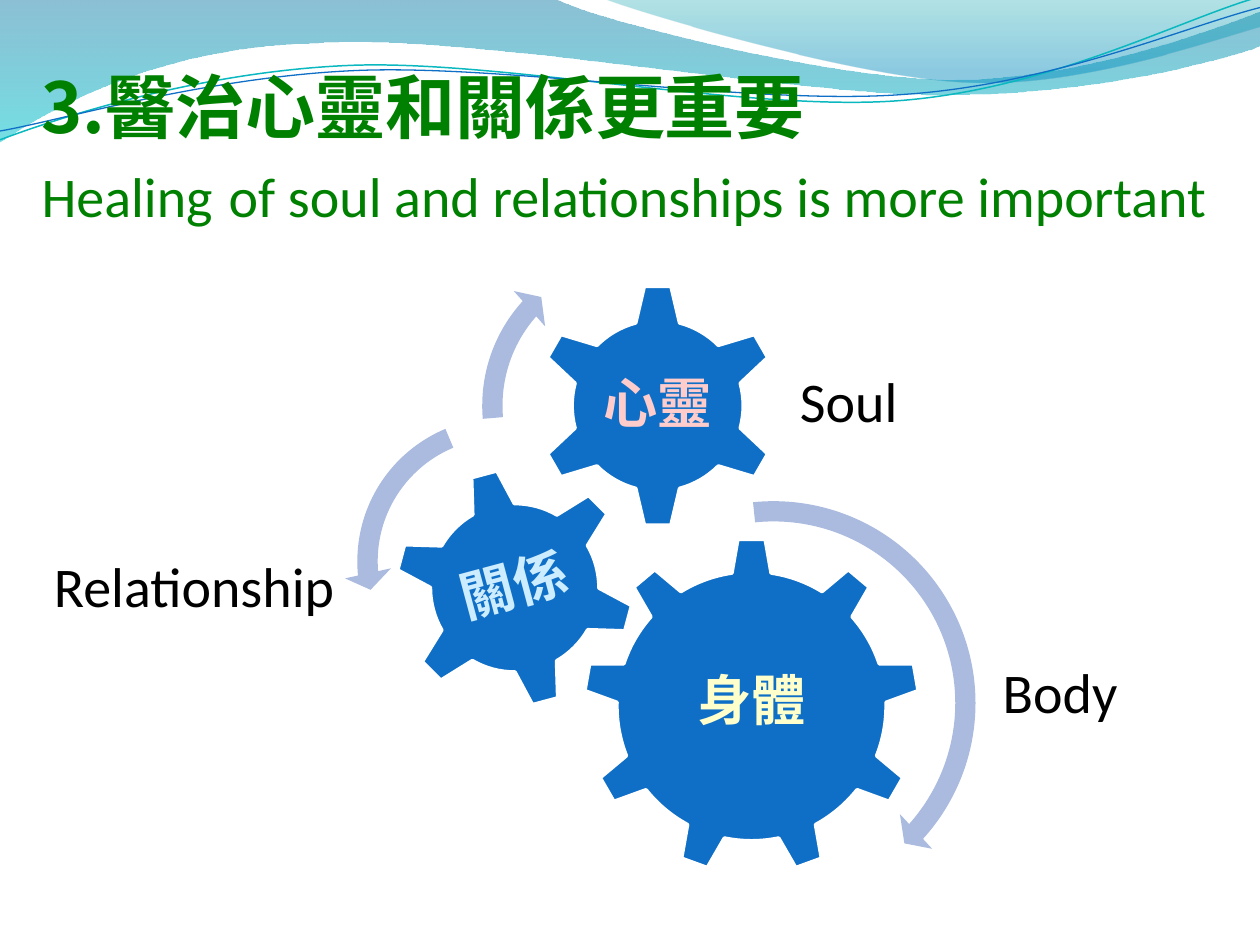
from pptx import Presentation
from pptx.dml.color import RGBColor
from pptx.enum.shapes import MSO_SHAPE
from pptx.enum.text import MSO_ANCHOR, PP_ALIGN
from pptx.oxml.ns import qn
from pptx.util import Inches, Pt
from lxml import etree

GEAR6, GEAR9 = MSO_SHAPE.GEAR_6, MSO_SHAPE.GEAR_9
ARROW, LEFT_ARROW = MSO_SHAPE.CIRCULAR_ARROW, MSO_SHAPE.LEFT_CIRCULAR_ARROW
MIDDLE, BOTTOM = MSO_ANCHOR.MIDDLE, MSO_ANCHOR.BOTTOM
LEFT, CENTER = PP_ALIGN.LEFT, PP_ALIGN.CENTER
CJK, LATIN = "Noto Sans CJK SC", "Calibri"
COLORS = {
    "title": "008000", "gear": "0F6FC6", "outline": "FFFFFF", "arrow": "ABBBDF",
    "body": "FFFFCC", "soul": "FFCCCC", "relationship": "CCECFF", "label": "000000",
    "deep": "0074A1", "cyan": "00C6CF", "teal": "00A1A9", "sky": "008BBF", "aqua": "0AB8BF",
}


def rgb(name):
    return RGBColor.from_string(COLORS[name])


def add_run(p, text, font, size, color, bold=False):
    r = p.add_run()
    r.text = text
    for name, value in {"name": font, "size": Pt(size), "bold": bold}.items():
        setattr(r.font, name, value)
    r.font.color.rgb = rgb(color)
    etree.SubElement(r.font._element, qn("a:ea"), typeface=font)


prs = Presentation()
prs.slide_width, prs.slide_height = Inches(10), Inches(7.5)
s = prs.slides.add_slide(prs.slide_layouts[5])
master_tree = prs.slide_master.shapes._spTree

waves = [
    ([[(0, 0)], [(4.4, -0.01)],
      [(4.76, 0.17), (6.64, 0.63), (7.58, 0.63)], [(8.53, 0.63), (9.58, 0.26), (10, 0.09)],
      [(10.01, 0.36)], [(9.83, 0.44), (8.7, 0.76), (7.46, 0.75)],
      [(6.22, 0.75), (3.82, 0.28), (2.57, 0.34)], [(1.29, 0.36), (0.46, 0.83), (-0.01, 1.13)]],
     [(0, "deep", 45), (1, "cyan", 55)], None),
    ([[(4.79, -0.01)], [(5.09, 0.11), (6.82, 0.62), (7.69, 0.65)],
      [(8.56, 0.69), (9.61, 0.32), (10, 0.21)], [(10, 0)]],
     [(0, "teal", 30), (0.8, "sky", 45)], None),
    ([[(0, 1.11)], [(0.48, 0.93), (1.58, 0.57), (2.77, 0.52)],
      [(3.95, 0.47), (5.93, 0.89), (7.13, 0.8)], [(8.33, 0.71), (9.38, 0.15), (9.98, -0.02)]],
     None, ("aqua", 0.85)),
    ([[(0, 1.04)], [(0.47, 0.96), (1.64, 0.61), (2.83, 0.56)],
      [(4.03, 0.51), (5.97, 0.84), (7.17, 0.75)], [(8.36, 0.67), (9.41, 0.21), (10, 0.06)]],
     None, ("gear", 0.75)),
]
for index, (segments, stops, line) in enumerate(waves):
    points = [(Inches(x), Inches(y)) for seg in segments for x, y in seg]
    fb = s.shapes.build_freeform(*points[0])
    fb.add_line_segments(points[1:], close=line is None)
    sp = fb.convert_to_shape()
    lines = iter(list(sp._element.iter(qn("a:lnTo"))))
    for seg in segments[1:]:
        parts = [next(lines) for _ in seg]
        if len(parts) == 3:
            curve = etree.Element(qn("a:cubicBezTo"))
            parts[0].addprevious(curve)
            for part in parts:
                curve.append(part[0])
                part.getparent().remove(part)
    sp.shadow.inherit = False
    if stops:
        sp.line.fill.background()
        sp.fill.gradient()
        sp.fill.gradient_angle = 270
        for stop, (pos, color, alpha) in zip(sp.fill.gradient_stops, stops):
            stop.position = pos
            stop.color.rgb = rgb(color)
            clr = stop._gs.find(qn("a:srgbClr"))
            etree.SubElement(clr, qn("a:alpha"), val=str(alpha * 1000))
    else:
        sp.fill.background()
        sp.line.color.rgb = rgb(line[0])
        sp.line.width = Pt(line[1])
    sp._element.nvSpPr.cNvPr.set("id", str(20 + index))
    master_tree.insert(2 + index, sp._element)

title = s.shapes.title
title.left, title.top, title.width, title.height = (Inches(v) for v in (0.33, 0.17, 9.33, 1.67))
tf = title.text_frame
for name, value in {"vertical_anchor": BOTTOM, "word_wrap": True, "margin_left": 0,
                    "margin_right": 0, "margin_top": Inches(0.05), "margin_bottom": 0}.items():
    setattr(tf, name, value)
p = tf.paragraphs[0]
p.alignment = LEFT
add_run(p, "3.醫治心靈和關係更重要 ", CJK, 40, "title", True)
p.add_line_break()
for text, size in [("Healing", 32), (" ", 40), ("of soul and relationships is more important", 32)]:
    add_run(p, text, LATIN, size, "title")

gears = [
    (GEAR9, 4.63, 4.27, 2.67, 0, "身體", "body"),
    (GEAR6, 4.25, 2.25, 1.94, 0, "心靈", "soul"),
    (GEAR6, 3.13, 3.71, 1.91, 345, "關係", "relationship"),
]
for kind, x, y, size, rotation, text, color in gears:
    sp = s.shapes.add_shape(kind, Inches(x), Inches(y), Inches(size), Inches(size))
    sp.rotation = rotation
    sp.shadow.inherit = False
    sp.fill.solid()
    sp.fill.fore_color.rgb = rgb("gear")
    sp.line.color.rgb = rgb("outline")
    sp.line.width = Pt(2)
    tf = sp.text_frame
    tf.word_wrap = True
    tf.vertical_anchor = MIDDLE
    for side in ("left", "right", "top", "bottom"):
        setattr(tf, f"margin_{side}", Inches(0.04))
    p = tf.paragraphs[0]
    p.alignment = CENTER
    p.line_spacing = 0.9
    add_run(p, text, CJK, 31, color, True)

arrows = [
    (ARROW, 4.43, 3.87, 3.42, (0.047, 2.99, 25.219, 158.49, 0.055)),
    (LEFT_ARROW, 2.73, 3.21, 2.49, (0.065, 4.3, 104.891, 148.378, 0.075)),
    (ARROW, 3.72, 1.88, 2.68, (0.06, 3.941, 133.138, 105.082, 0.07)),
]
for kind, x, y, size, adjustments in arrows:
    sp = s.shapes.add_shape(kind, Inches(x), Inches(y), Inches(size), Inches(size))
    for i, value in enumerate(adjustments):
        sp.adjustments[i] = value
    sp.shadow.inherit = False
    sp.fill.solid()
    sp.fill.fore_color.rgb = rgb("arrow")
    sp.line.fill.background()

labels = [("Body", 7.86, 5.17, 1.12), ("Relationship", 0.33, 4.33, 2.46), ("Soul", 6.25, 2.86, 0.99)]
for text, x, y, width in labels:
    sp = s.shapes.add_textbox(Inches(x), Inches(y), Inches(width), Inches(0.64))
    sp.text_frame.word_wrap = False
    add_run(sp.text_frame.paragraphs[0], text, LATIN, 32, "label")

prs.save("out.pptx")
